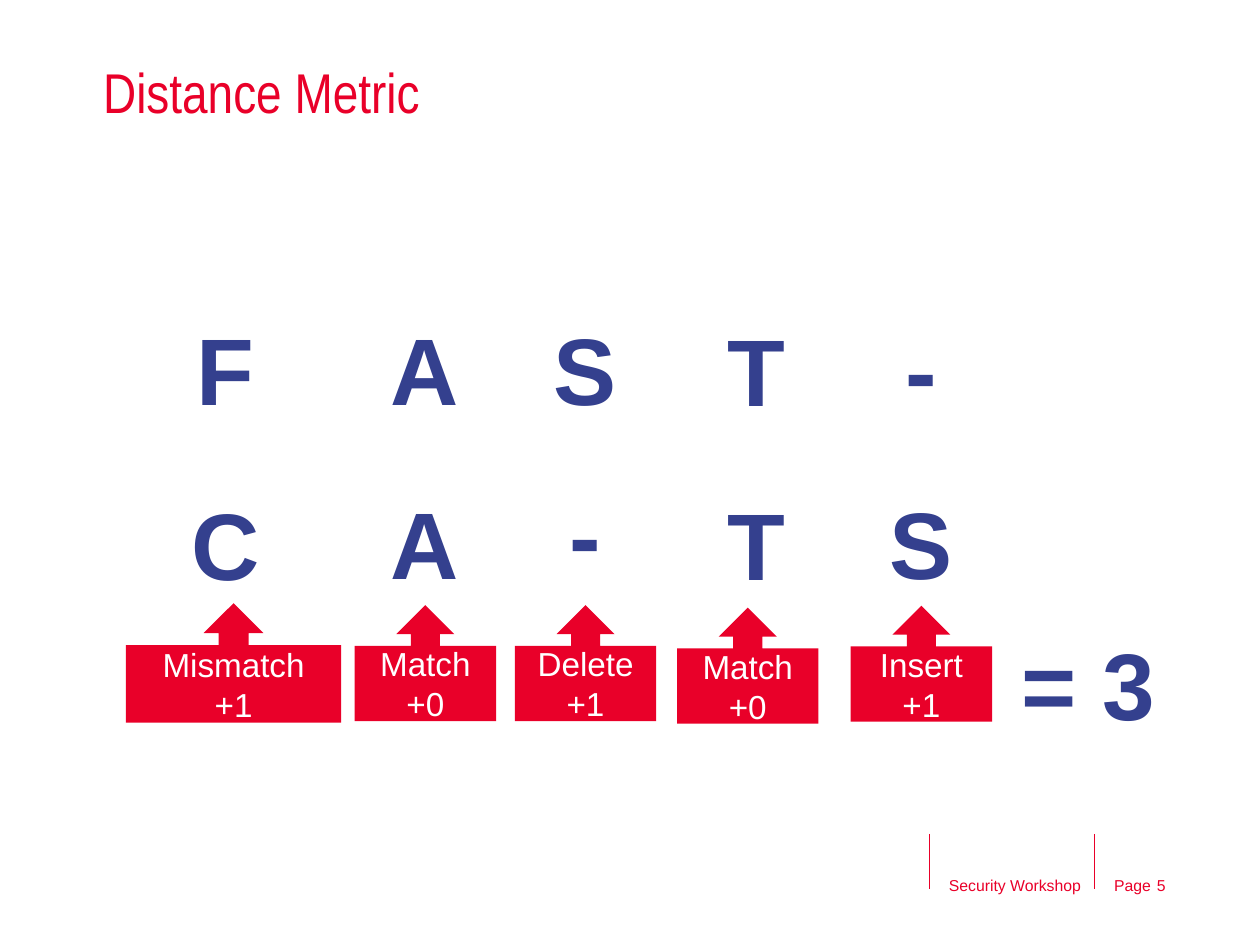
"""Build the Distance Metric slide, which scores the alignment of FAST and CATS."""
from pptx import Presentation, util as u
from pptx.dml.color import RGBColor
from pptx.enum import shapes, text
from pptx.oxml.ns import qn
from lxml import etree

RED, NAVY, WHITE = "E90029", "34408E", "FFFFFF"
LEFT, CENTER = text.PP_ALIGN.LEFT, text.PP_ALIGN.CENTER
TOP, MIDDLE, BOTTOM = text.MSO_ANCHOR.TOP, text.MSO_ANCHOR.MIDDLE, text.MSO_ANCHOR.BOTTOM


def paint(color, value):
    color.rgb = RGBColor.from_string(value)


def write(box, words, size=9, color=RED, font="Arial", bold=False, align=LEFT,
          anchor=BOTTOM, spacing=1.0, inset=0.0, wrap=True):
    frame = box.text_frame
    frame.word_wrap = wrap
    frame.auto_size = text.MSO_AUTO_SIZE.NONE
    frame.vertical_anchor = anchor
    frame.margin_left = frame.margin_right = u.Cm(inset)
    frame.margin_top = frame.margin_bottom = u.Cm(inset / 2)
    for index, line in enumerate(words.split("\n")):
        para = frame.add_paragraph() if index else frame.paragraphs[0]
        para.alignment, para.line_spacing = align, spacing
        span = para.add_run()
        span.text = line
        span.font.size, span.font.name, span.font.bold = u.Pt(size), font, bold
        paint(span.font.color, color)


deck = Presentation()
deck.slide_width, deck.slide_height = u.Cm(25.4), u.Cm(19.05)
page = deck.slides.add_slide(deck.slide_layouts[5])

title = page.shapes.title
title.left, title.top, title.width, title.height = u.Cm(2.08), u.Cm(1.12), u.Cm(19.99), u.Cm(1.42)
write(title, "Distance Metric", size=32, font="Arial Narrow", spacing=0.9)

for x in (18.73, 22.07):
    rule = page.shapes.add_connector(shapes.MSO_CONNECTOR.STRAIGHT, u.Cm(x), u.Cm(16.81), u.Cm(x), u.Cm(17.93))
    paint(rule.line.color, RED)
    rule.line.width = u.Pt(0.5)
    etree.SubElement(rule._element.spPr, qn("a:effectLst"))

for words, x, y, width, height, wrap in (
    ("Security Workshop", 19.13, 16.74, 2.9, 1.29, True),
    ("Page", 22.46, 17.61, 0.74, 0.43, False),
    ("5", 23.32, 17.02, 0.76, 1.01, True),
):
    footer = page.shapes.add_textbox(u.Cm(x), u.Cm(y), u.Cm(width), u.Cm(height))
    write(footer, words, spacing=1.1, wrap=wrap)

letters = [("= 3", 21.94, 12.5, 3.23)]
letter_widths = {"F": 1.68, "T": 1.68, "A": 1.9, "C": 1.9, "S": 1.8, "-": 1.14}
columns = (4.55, 8.57, 11.8, 15.24, 18.57)
for word, tops in (
    ("FAST-", (6.15, 6.15, 6.15, 6.17, 6.15)),
    ("CA-TS", (9.68, 9.65, 9.47, 9.68, 9.65)),
):
    for letter, center, y in zip(word, columns, tops):
        letters.append((letter, center, y, letter_widths[letter]))

for letter, center, y, width in letters:
    box = page.shapes.add_textbox(u.Cm(center - width / 2), u.Cm(y), u.Cm(width), u.Cm(2.57))
    write(box, letter, size=54, color=NAVY, bold=True, align=CENTER, anchor=TOP, inset=0.25, wrap=False)

for words, x, y, width, height in (
    ("Mismatch\n+1", 2.54, 12.16, 4.34, 2.41),
    ("Match\n+0", 7.15, 12.2, 2.85, 2.34),
    ("Delete\n+1", 10.38, 12.2, 2.85, 2.34),
    ("Match\n+0", 13.65, 12.25, 2.85, 2.34),
    ("Insert\n+1", 17.15, 12.21, 2.85, 2.34),
):
    callout = page.shapes.add_shape(
        shapes.MSO_SHAPE.UP_ARROW_CALLOUT, u.Cm(x), u.Cm(y), u.Cm(width), u.Cm(height))
    callout.shadow.inherit = False
    callout.fill.solid()
    paint(callout.fill.fore_color, RED)
    callout.line.fill.background()
    write(callout, words, size=19, color=WHITE, align=CENTER, anchor=MIDDLE, inset=0.25)

deck.save("out.pptx")
